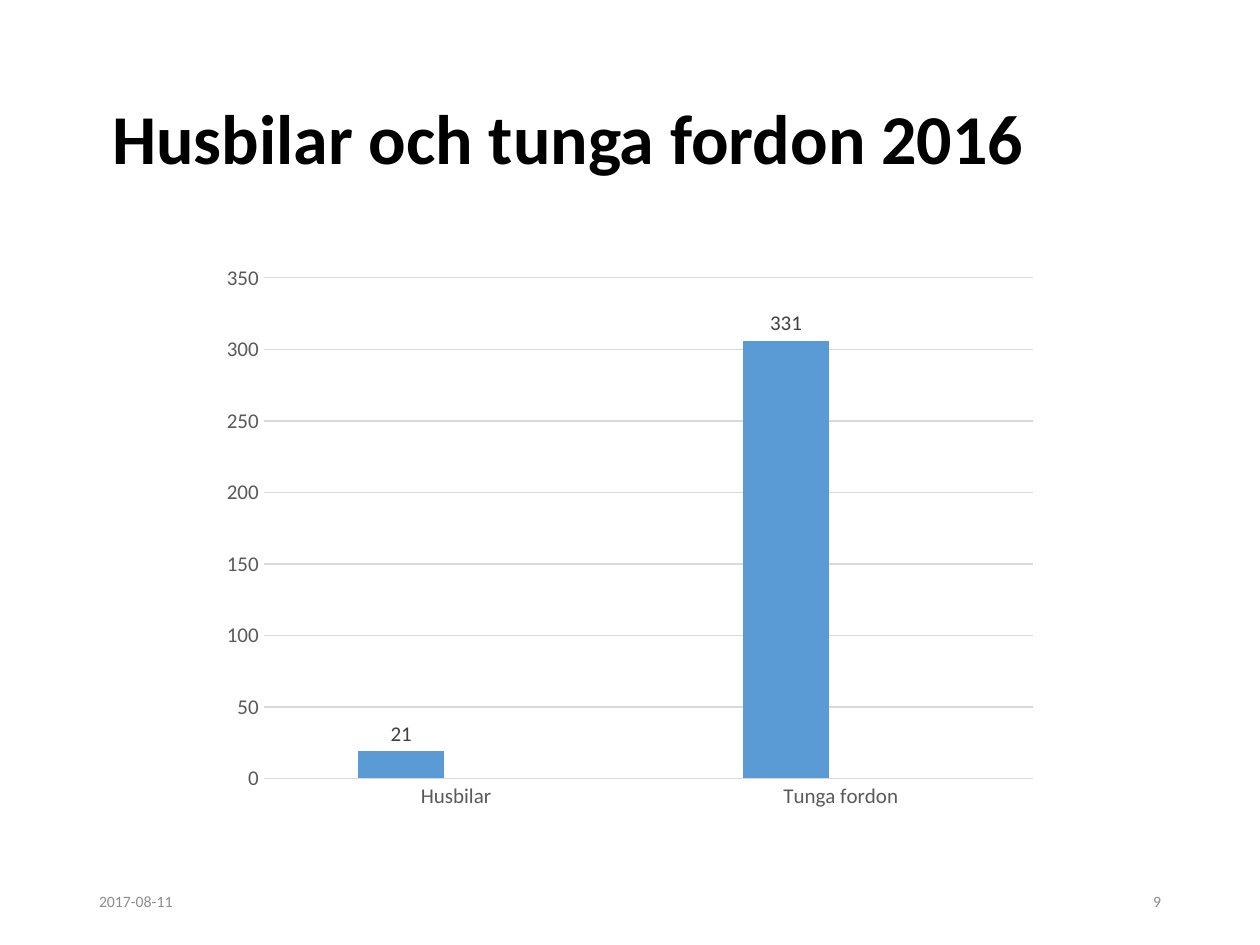
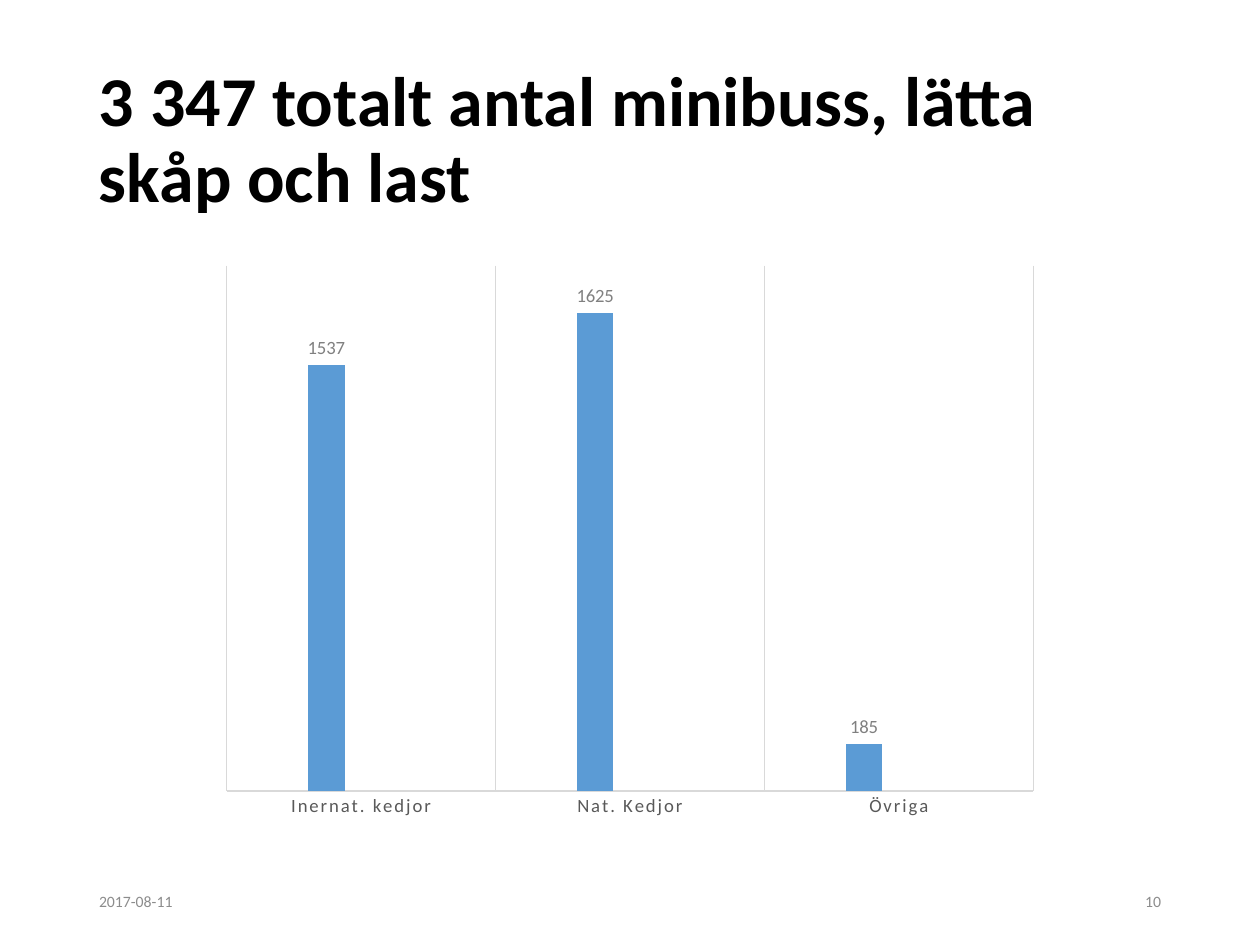
from dataclasses import dataclass

from pptx import Presentation
from pptx.chart.data import CategoryChartData
from pptx.dml.color import RGBColor
from pptx.enum.chart import XL_CHART_TYPE as Chart, XL_LABEL_POSITION as LabelPos, XL_TICK_MARK as Tick
from pptx.enum.text import MSO_ANCHOR as Anchor, PP_ALIGN as Align
from pptx.util import Pt


@dataclass(frozen=True)
class Theme:
    """Colours, type sizes and margins shared by the slides."""
    font: str = "Calibri"
    title: str = "000000"
    footer: str = "8C8C8C"
    axis: str = "595959"
    rule: str = "D9D9D9"
    dark_label: str = "404040"
    light_label: str = "808080"
    bars: tuple = ("5B9BD5", "ED7D31")
    title_size: float = 40
    footer_size: float = 9
    chart_size: float = 10
    large_label: float = 11.97
    small_label: float = 10.64
    left: float = 49.5
    width: float = 621
    inset: float = 7.2


def rgb(color):
    """Turn a hex string into a colour."""
    return RGBColor.from_string(color)


class Deck:
    """Hold the presentation, its theme and the current slide."""

    def __init__(self, theme):
        """Start an empty 10 by 7.5 inch presentation."""
        self.theme = theme
        self.prs = Presentation()
        self.prs.slide_width, self.prs.slide_height = Pt(720), Pt(540)

    def style(self, font, size, color, bold=False):
        """Apply the theme font with a size and colour."""
        font.name, font.size, font.bold = self.theme.font, Pt(size), bold
        font.color.rgb = rgb(color)

    def text(self, box, text, size, color, bold=False, align=Align.LEFT, indent=0):
        """Add one vertically centred paragraph."""
        tf = self.s.shapes.add_textbox(*map(Pt, box)).text_frame
        tf.word_wrap = True
        tf.vertical_anchor = Anchor.MIDDLE
        tf.margin_left = Pt(self.theme.inset + indent)
        p = tf.paragraphs[0]
        p.text, p.alignment = text, align
        self.style(p.font, size, color, bold)
        return p

    def slide(self, title, number, indent=0):
        """Add a slide with its title, date and number."""
        t = self.theme
        self.s = self.prs.slides.add_slide(self.prs.slide_layouts[6])
        p = self.text((t.left, 28.75, t.width, 104.4), title, t.title_size, t.title, True, indent=indent)
        p.line_spacing = 0.9
        w = 162
        for x, text, align in ((t.left, "2017-08-11", Align.LEFT),
                               (t.left + t.width - w, str(number), Align.RIGHT)):
            self.text((x, 500.5, w, 28.75), text, t.footer_size, t.footer, align=align)

    def rule(self, line):
        """Style a thin grey rule."""
        line.color.rgb, line.width = rgb(self.theme.rule), Pt(0.75)

    def grid(self, axis):
        """Show the thin major gridlines of an axis."""
        axis.has_major_gridlines = True
        self.rule(axis.major_gridlines.format.line)

    def labels(self, series, texts, size, color):
        """Label the points of a series above their columns."""
        for point, text in zip(series.points, texts):
            dl = point.data_label
            p = dl.text_frame.paragraphs[0]
            p.text = text
            self.style(p.font, size, color)
            dl.position = LabelPos.OUTSIDE_END
        dls = series.data_labels
        dls.show_value, dls.position = True, LabelPos.OUTSIDE_END
        self.style(dls.font, size, color)

    def columns(self, height, points, size, label_color, gap, overlap):
        """Add a column chart from (category, value, label) points."""
        names, values, texts = zip(*points)
        data = CategoryChartData()
        data.categories = names
        data.add_series("Series 1", values)
        data.add_series("Series 2", [None] * len(values))
        box = map(Pt, (120, 145.2, 480, height))
        chart = self.s.shapes.add_chart(Chart.COLUMN_CLUSTERED, *box, data).chart
        chart.has_title = chart.has_legend = False
        self.style(chart.font, self.theme.chart_size, self.theme.title)
        plot = chart.plots[0]
        plot.gap_width, plot.overlap, plot.vary_by_categories = gap, overlap, False
        for series, color in zip(plot.series, self.theme.bars):
            series.invert_if_negative = False
            series.format.fill.solid()
            series.format.fill.fore_color.rgb = rgb(color)
        self.labels(plot.series[0], texts, size, label_color)
        cat, val = chart.category_axis, chart.value_axis
        for axis in (cat, val):
            axis.major_tick_mark = axis.minor_tick_mark = Tick.NONE
            self.style(axis.tick_labels.font, size, self.theme.axis)
        self.rule(cat.format.line)
        val.format.line.fill.background()
        val.has_major_gridlines = False
        return cat, val


def main():
    """Build the two chart slides."""
    t = Theme()
    deck = Deck(t)

    deck.slide("Husbilar och tunga fordon 2016", 9, indent=7.5)
    cat, val = deck.columns(323.25, [("Husbilar", 19, "21"), ("Tunga fordon", 306, "331")],
                            t.large_label, t.dark_label, gap=219, overlap=-27)
    deck.grid(val)

    deck.slide("3 347 totalt antal minibuss, lätta skåp och last", 10)
    cat, val = deck.columns(329, [("Inernat. kedjor", 1460, "1537"), ("Nat. Kedjor", 1639, "1625"),
                                  ("Övriga", 162, "185")],
                            t.small_label, t.light_label, gap=444, overlap=-90)
    val.visible = False
    deck.grid(cat)
    for rpr in cat._element.xpath("c:txPr//a:defRPr"):
        rpr.set("spc", "120")

    deck.prs.save("out.pptx")


if __name__ == "__main__":
    main()
